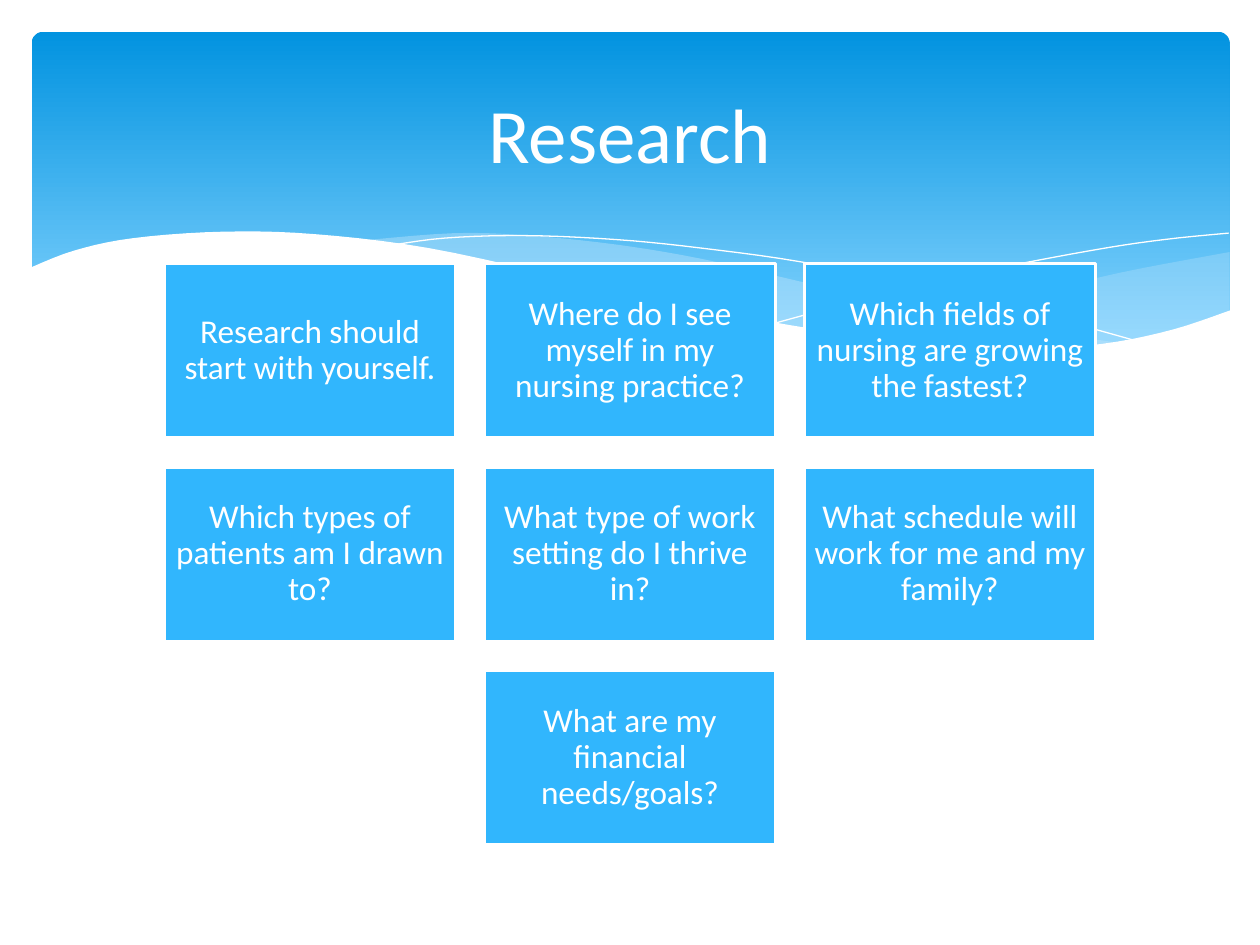
from dataclasses import dataclass

from lxml.etree import SubElement
from pptx import Presentation
from pptx.dml.color import RGBColor as RGB
from pptx.enum.shapes import MSO_SHAPE as SHAPE
from pptx.enum.text import MSO_ANCHOR as ANCHOR, PP_ALIGN as ALIGN
from pptx.oxml.ns import qn
from pptx.util import Cm, Pt


@dataclass(frozen=True)
class Theme:
    white: RGB = RGB.from_string("FFFFFF")
    card: RGB = RGB.from_string("31B6FD")
    mist: RGB = RGB.from_string("C6E7FC")
    sky_top: RGB = RGB.from_string("0293E0")
    sky_low: RGB = RGB.from_string("83D3FE")
    font: str = "Calibri"
    title_size: int = 44
    card_size: int = 19


def smooth(points, steps=5):
    ends = [points[0], *points, points[-1]]
    curve = []
    for a, b, c, d in zip(ends, ends[1:], ends[2:], ends[3:]):
        for i in range(steps):
            t = i / steps
            curve.append(tuple(
                q + t / 2 * (r - p + t * (2 * p - 5 * q + 4 * r - s + t * (3 * (q - r) + s - p)))
                for p, q, r, s in zip(a, b, c, d)))
    return curve + [points[-1]]


class Deck:
    """Draws styled elements on the current slide, with lengths in centimetres."""

    def __init__(self, slide, theme):
        self.s, self.theme = slide, theme

    def text(self, sp, text, size, inset, **paragraph):
        tf = sp.text_frame
        frame = dict(word_wrap=True, vertical_anchor=ANCHOR.MIDDLE)
        frame.update({f"margin_{side}": Cm(inset) for side in ("left", "top", "right", "bottom")})
        p = tf.paragraphs[0]
        r = p.add_run()
        r.text = text
        r.font.color.rgb = self.theme.white
        font = dict(name=self.theme.font, size=Pt(size))
        formats = (tf, frame), (p, dict(alignment=ALIGN.CENTER, **paragraph)), (r.font, font)
        for target, values in formats:
            for name, value in values.items():
                setattr(target, name, value)

    def title(self, text, *box):
        sp = self.s.shapes.add_textbox(*map(Cm, box))
        self.text(sp, text, self.theme.title_size, 0.25)

    def card(self, text, *box):
        sp = self.s.shapes.add_shape(SHAPE.RECTANGLE, *map(Cm, box))
        sp.shadow.inherit = False
        sp.fill.solid()
        sp.fill.fore_color.rgb = self.theme.card
        sp.line.color.rgb = self.theme.white
        sp.line.width = Pt(2)
        self.text(sp, text, self.theme.card_size, 0.2, line_spacing=0.9)

    def banner(self, *box):
        sp = self.s.shapes.add_shape(SHAPE.ROUNDED_RECTANGLE, *map(Cm, box))
        sp.adjustments[0] = 0.034
        sp.shadow.inherit = False
        sp.line.fill.background()
        sp.fill.gradient()
        sp.fill.gradient_angle = 270
        stops = (0, self.theme.sky_top), (0.9, self.theme.sky_low)
        for stop, (position, color) in zip(sp.fill.gradient_stops, stops):
            stop.position = position
            stop.color.rgb = color

    def outline(self, points, close):
        start, *rest = [(Cm(x), Cm(y)) for x, y in points]
        builder = self.s.shapes.build_freeform(*start)
        builder.add_line_segments(rest, close=close)
        sp = builder.convert_to_shape()
        sp.shadow.inherit = False
        return sp

    def wave(self, points, color, opacity=100):
        sp = self.outline(points, True)
        sp.line.fill.background()
        sp.fill.solid()
        sp.fill.fore_color.rgb = color
        if opacity < 100:
            clr = sp.fill._xPr.find(qn("a:solidFill"))[0]
            SubElement(clr, qn("a:alpha")).set("val", str(opacity * 1000))

    def ripple(self, points):
        sp = self.outline(points, False)
        sp.fill.background()
        sp.line.color.rgb = self.theme.white
        sp.line.width = Pt(0)


RIGHT_TOP = [(24.79, 5.08), (23.01, 5.41), (21.87, 5.66), (19.79, 6.15), (17.93, 6.53), (16.79, 6.73)]
RIGHT_LOW = [(16.79, 6.73), (18.26, 6.91), (19.84, 7.04), (21.69, 7.01), (23.19, 6.78),
             (24.1, 6.53), (24.79, 6.27)]
MIDDLE_LOW = [(7.26, 4.85), (9.19, 5.16), (11.4, 5.64), (13.46, 6.1), (15.7, 6.55), (17.65, 6.86),
              (19.33, 7.04), (21.03, 7.06), (22.68, 6.93)]
MIDDLE_TOP = [(22.68, 6.93), (20.5, 6.6), (17.93, 6.1), (15.98, 5.64), (14.1, 5.21), (12.42, 4.93),
              (10.67, 4.75), (9.17, 4.7), (7.26, 4.85)]
LONG_RIPPLE = [(7.85, 4.95), (8.97, 4.8), (10.57, 4.75), (12.42, 4.83), (14.12, 5), (16.15, 5.28),
               (18.47, 5.74), (21.11, 6.38), (23.04, 6.91)]
SHORT_RIPPLE = [(15.57, 6.53), (17.65, 5.97), (19.71, 5.49), (22, 5.05), (23.47, 4.83), (24.77, 4.7)]
FRONT_TOP = [(24.82, 6.25), (23.62, 6.65), (22.23, 6.93), (20.55, 7.04), (18.44, 6.91), (15.9, 6.55),
             (13.44, 6.07), (11.35, 5.59), (8.64, 5), (6.35, 4.72), (4.5, 4.67), (2.69, 4.8),
             (1.5, 5.05), (0.58, 5.41)]
FRONT_BASE = [(0.58, 8.36), (24.82, 8.36)]

QUESTIONS = [
    ["Research should start with yourself.",
     "Where do I see myself in my nursing practice?",
     "Which fields of nursing are growing the fastest?"],
    ["Which types of patients am I drawn to?",
     "What type of work setting do I thrive in?",
     "What schedule will work for me and my family?"],
    ["What are my financial needs/goals?"],
]
SLIDE_W, SLIDE_H = 25.4, 19.05
CARD_W, CARD_H, GAP, CARDS_TOP = 5.87, 3.52, 0.58, 5.31


def main():
    prs = Presentation()
    prs.slide_width, prs.slide_height = Cm(SLIDE_W), Cm(SLIDE_H)
    theme = Theme()
    deck = Deck(prs.slides.add_slide(prs.slide_layouts[6]), theme)

    deck.banner(0.64, 0.64, 24.15, 6.86)
    deck.wave(smooth(RIGHT_TOP) + smooth(RIGHT_LOW), theme.mist, 29)
    deck.wave(smooth(MIDDLE_LOW) + smooth(MIDDLE_TOP), theme.mist, 40)
    for ripple in (LONG_RIPPLE, SHORT_RIPPLE):
        deck.ripple(smooth(ripple))
    deck.wave(smooth(FRONT_TOP) + FRONT_BASE, theme.white)
    deck.title("Research", 1.27, 0.94, 22.86, 3.48)

    for row, questions in enumerate(QUESTIONS):
        left = (SLIDE_W - len(questions) * (CARD_W + GAP) + GAP) / 2
        top = CARDS_TOP + row * (CARD_H + GAP)
        for col, question in enumerate(questions):
            deck.card(question, left + col * (CARD_W + GAP), top, CARD_W, CARD_H)

    prs.save("out.pptx")


if __name__ == "__main__":
    main()
